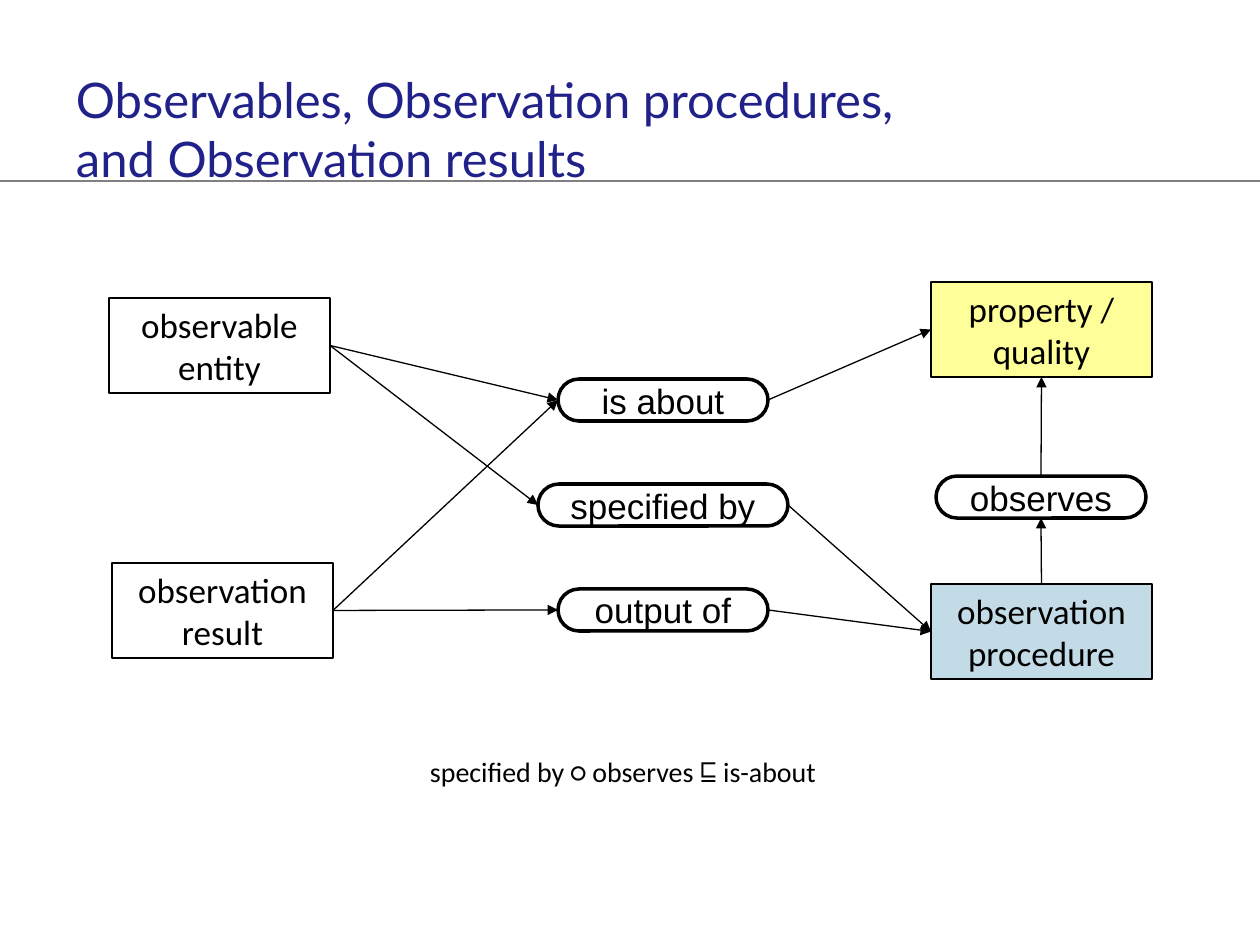
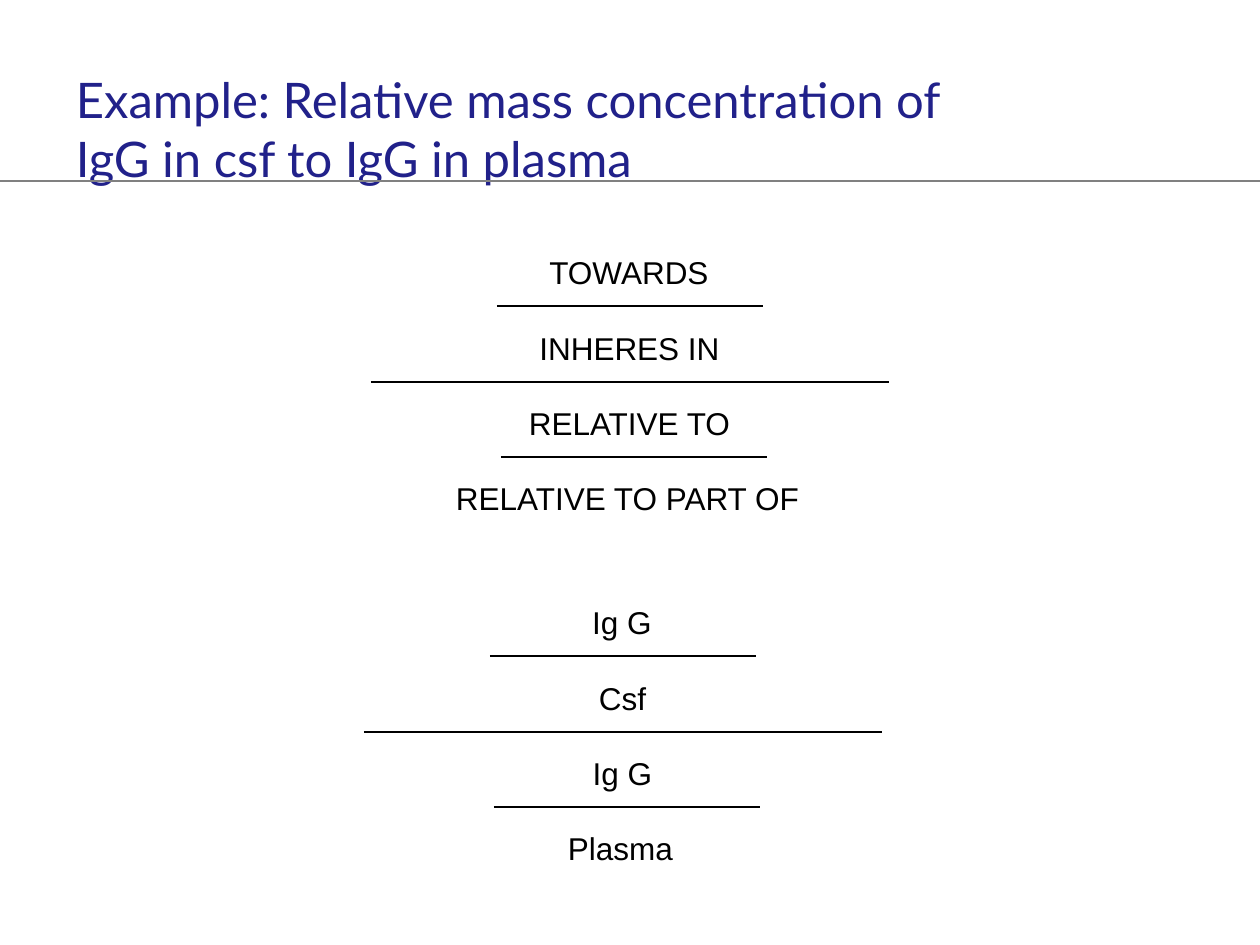
from dataclasses import dataclass

from lxml import etree
from pptx import Presentation
from pptx.dml.color import RGBColor
from pptx.enum.shapes import MSO_CONNECTOR, MSO_SHAPE
from pptx.enum.text import MSO_ANCHOR, MSO_AUTO_SIZE, PP_ALIGN
from pptx.oxml.ns import qn
from pptx.util import Emu, Pt

STRAIGHT = MSO_CONNECTOR.STRAIGHT
RECTANGLE, ROUNDED = MSO_SHAPE.RECTANGLE, MSO_SHAPE.ROUNDED_RECTANGLE
LEFT, CENTER = PP_ALIGN.LEFT, PP_ALIGN.CENTER
TOP, MIDDLE = MSO_ANCHOR.TOP, MSO_ANCHOR.MIDDLE
TITLE_ONLY = 5
# Connection sites of rectangles and rounded rectangles
TOP_SITE, LEFT_SITE, BOTTOM_SITE, RIGHT_SITE = range(4)

SLIDE_W, SLIDE_H = 1260, 945
PX_PER_INCH = 126


@dataclass(frozen=True)
class Theme:
    ink: RGBColor = RGBColor(0, 0, 0)
    title: RGBColor = RGBColor(0x21, 0x21, 0x8A)
    rule: RGBColor = RGBColor(0x80, 0x80, 0x80)
    quality: RGBColor = RGBColor(0xFF, 0xFF, 0x99)
    procedure: RGBColor = RGBColor(0xC3, 0xDB, 0xE6)
    title_font: str = "Lato"
    entity_font: str = "Calibri"
    relation_font: str = "Arial"
    symbol_font: str = "Noto Sans Mono"
    title_size: float = 28
    node_size: float = 20
    term_size: float = 18
    formula_size: float = 16
    thin: float = 0.75
    bar: float = 1.45
    thick: float = 2


THEME = Theme()


def px(length):
    return Emu(round(length * 914400 / PX_PER_INCH))


def style_text(frame, font, size, color=THEME.ink, align=CENTER, inset=0):
    frame.word_wrap = True
    frame.vertical_anchor = MIDDLE
    frame.margin_left = frame.margin_right = px(inset)
    frame.margin_top = frame.margin_bottom = 0
    for paragraph in frame.paragraphs:
        paragraph.alignment = align
        paragraph.font.name = font
        paragraph.font.size = Pt(size)
        paragraph.font.color.rgb = color


def add_line(slide, x1, y1, x2, y2, color=THEME.ink, weight=THEME.thin):
    line = slide.shapes.add_connector(STRAIGHT, px(x1), px(y1), px(x2), px(y2))
    line.line.color.rgb = color
    line.line.width = Pt(weight)
    etree.SubElement(line._element.spPr, qn("a:effectLst"))
    return line


def add_arrow(slide, source, source_site, target, target_site):
    arrow = add_line(slide, 0, 0, 0, 0)
    arrow.begin_connect(source, source_site)
    arrow.end_connect(target, target_site)
    outline = arrow._element.spPr.find(qn("a:ln"))
    etree.SubElement(outline, qn("a:tailEnd"), type="triangle")


def add_titled_slide(deck, heading):
    slide = deck.slides.add_slide(deck.slide_layouts[TITLE_ONLY])
    add_line(slide, 0, 181, SLIDE_W, 181, THEME.rule)
    title = slide.shapes.title
    title.left, title.top, title.width, title.height = map(px, (63, 89, 911, 79))
    title.text_frame.text = heading
    title.text_frame.auto_size = MSO_AUTO_SIZE.NONE
    style_text(title.text_frame, THEME.title_font, THEME.title_size,
               THEME.title, LEFT, inset=13)
    return slide


def add_node(slide, kind, x, y, w, h, label, font, weight, fill=None):
    node = slide.shapes.add_shape(kind, px(x), px(y), px(w), px(h))
    node.shadow.inherit = False
    if fill is None:
        node.fill.background()
    else:
        node.fill.solid()
        node.fill.fore_color.rgb = fill
    node.line.color.rgb = THEME.ink
    node.line.width = Pt(weight)
    node.text_frame.text = label
    style_text(node.text_frame, font, THEME.node_size, inset=9)
    return node


def add_relation_diagram(slide, left, top):
    def entity(x, y, label, fill=None):
        return add_node(slide, RECTANGLE, left + x, top + y, 221, 95, label,
                        THEME.entity_font, THEME.thin, fill)

    def relation(center_x, y, label, width=210):
        pill = add_node(slide, ROUNDED, left + center_x - width / 2, top + y,
                        width, 42, label, THEME.relation_font, THEME.thick)
        pill.adjustments[0] = 0.5
        return pill

    # Entities at the sides
    observable = entity(0, 16, "observable\nentity")
    result = entity(3, 281, "observation result")
    quality = entity(822, 0, "property / quality", THEME.quality)
    procedure = entity(822, 302, "observation procedure", THEME.procedure)

    # Relations between them
    is_about = relation(554, 97, "is about")
    specified_by = relation(554, 202, "specified by", width=250)
    output_of = relation(554, 307, "output of")
    observes = relation(932, 194, "observes")

    for source, target in (
        (observable, is_about), (observable, specified_by),
        (result, is_about), (result, output_of),
        (is_about, quality), (specified_by, procedure), (output_of, procedure),
    ):
        add_arrow(slide, source, RIGHT_SITE, target, LEFT_SITE)
    for source, target in ((procedure, observes), (observes, quality)):
        add_arrow(slide, source, TOP_SITE, target, BOTTOM_SITE)


def add_formula(slide, left, top):
    formula = slide.shapes.add_textbox(px(left), px(top), px(426), px(47))
    paragraph = formula.text_frame.paragraphs[0]
    for text, font in (
        ("specified by ○ observes ", THEME.entity_font),
        ("⊑", THEME.symbol_font),
        (" is-about", THEME.entity_font),
    ):
        run = paragraph.add_run()
        run.text = text
        run.font.name = font
    style_text(formula.text_frame, THEME.entity_font, THEME.formula_size,
               align=LEFT, inset=13)


def add_term(slide, x, y, w, h, term):
    outline = slide.shapes.build_freeform(px(x), px(y))
    outline.add_line_segments(
        [(px(x + w), px(y)), (px(x + w), px(y + h)), (px(x), px(y + h))])
    box = outline.convert_to_shape()
    box.shadow.inherit = False
    box.fill.background()
    box.line.fill.background()
    frame = box.text_frame
    frame.text = term
    style_text(frame, THEME.relation_font, THEME.term_size, inset=13)
    frame.word_wrap = False
    frame.vertical_anchor = TOP
    frame.margin_top, frame.margin_bottom = px(9), px(6)


def add_fraction_stack(slide, left, top, terms):
    four_rows, bar_drop = 302, 62
    term_boxes = ((188, 140, 173), (178, 161, 47),
                  (173, 171, 47), (124, 265, 47))  # start, width, height
    bars = ((126, 266), (0, 518), (130, 266))  # start and length
    row_tops = [top + round(row * four_rows / 4) for row in range(4)]
    for y, term, (start, width, height) in zip(row_tops, terms, term_boxes):
        add_term(slide, left + start, y, width, height, term)
    for y, (start, length) in zip(row_tops, bars):
        add_line(slide, left + start, y + bar_drop,
                 left + start + length, y + bar_drop, weight=THEME.bar)


def main():
    deck = Presentation()
    deck.slide_width, deck.slide_height = px(SLIDE_W), px(SLIDE_H)

    # Relations among observables, procedures and results
    overview = add_titled_slide(
        deck, "Observables, Observation procedures, and Observation results")
    add_relation_diagram(overview, 109, 282)
    add_formula(overview, 417, 748)

    # Worked example: general pattern above, its values below
    example = add_titled_slide(
        deck, "Example: Relative mass concentration of IgG in csf to IgG in plasma")
    add_fraction_stack(example, 371, 244, (
        "TOWARDS", "INHERES IN", "RELATIVE TO", "RELATIVE TO PART OF"))
    add_fraction_stack(example, 364, 594, ("Ig G", "Csf", "Ig G", "Plasma"))

    deck.save("out.pptx")


if __name__ == "__main__":
    main()
